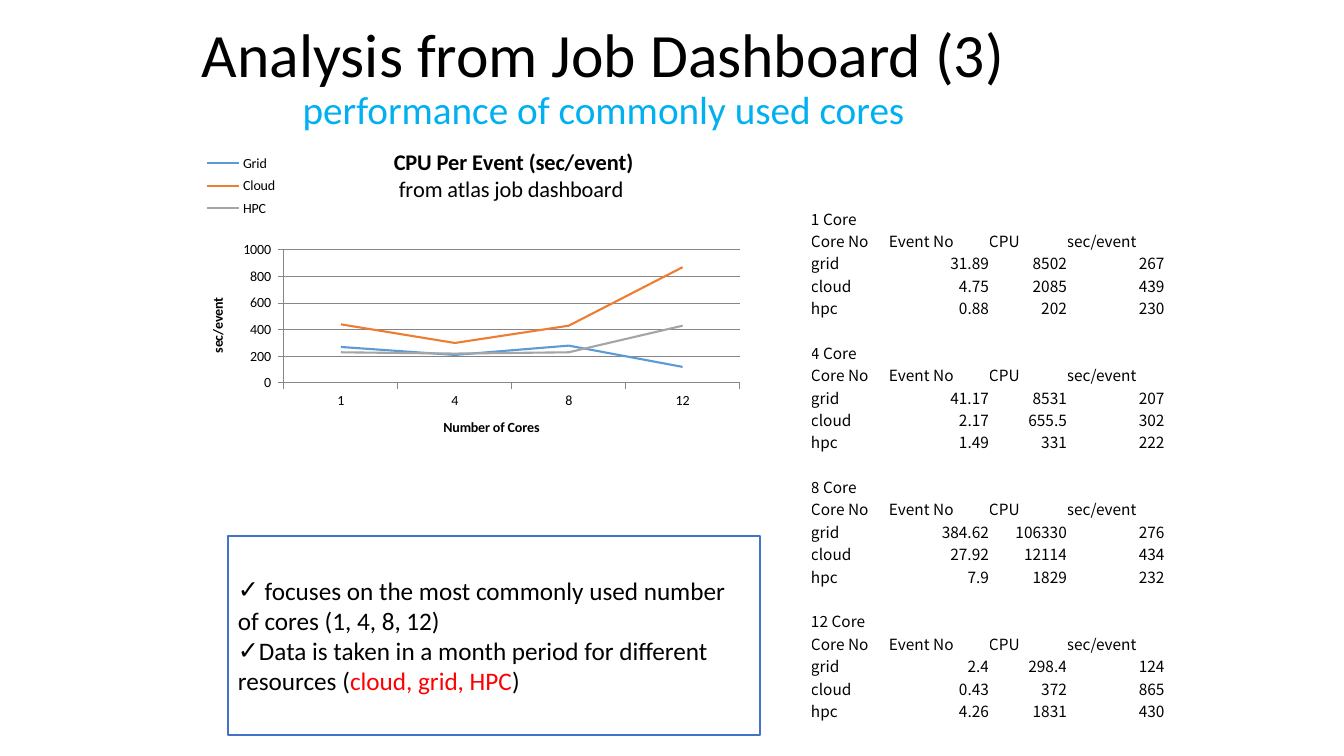
from dataclasses import dataclass
from typing import NamedTuple

from lxml import etree
from pptx import Presentation
from pptx.chart.data import CategoryChartData
from pptx.dml.color import RGBColor
from pptx.enum.chart import XL_CHART_TYPE, XL_LEGEND_POSITION, XL_TICK_MARK
from pptx.enum.shapes import MSO_SHAPE
from pptx.enum.text import MSO_ANCHOR, MSO_AUTO_SIZE, PP_ALIGN
from pptx.oxml.ns import qn
from pptx.util import Emu, Pt

LINE_CHART = XL_CHART_TYPE.LINE
LEGEND_RIGHT = XL_LEGEND_POSITION.RIGHT
TICK_OUT, TICK_NONE = XL_TICK_MARK.OUTSIDE, XL_TICK_MARK.NONE
RECTANGLE = MSO_SHAPE.RECTANGLE
MIDDLE = MSO_ANCHOR.MIDDLE
NO_AUTOFIT = MSO_AUTO_SIZE.NONE
LEFT, CENTER, RIGHT = PP_ALIGN.LEFT, PP_ALIGN.CENTER, PP_ALIGN.RIGHT

SLIDE_WIDTH, SLIDE_HEIGHT = 1344, 756
EMU_PER_PX = 12192000 / SLIDE_WIDTH


@dataclass(frozen=True)
class Theme:
    font: str = "Calibri"
    table_font: str = "Noto Sans CJK SC"
    bullet_font: str = "Arial"
    black: str = "000000"
    white: str = "FFFFFF"
    accent: str = "00B0F0"
    highlight: str = "FF0000"
    border: str = "4472C4"
    axis: str = "868686"
    title_size: int = 44
    subtitle_size: int = 28
    body_size: int = 18
    chart_title_size: int = 16
    table_size: int = 11
    chart_size: int = 10


class Box(NamedTuple):
    left: int
    top: int
    width: int
    height: int


class Resource(NamedTuple):
    name: str
    events: str
    cpu: str
    rate: int


class CoreGroup(NamedTuple):
    cores: int
    resources: tuple[Resource, ...]


THEME = Theme()
TITLE_BOX = Box(110, 0, 987, 157)
CHART_BOX = Box(187, 132, 651, 326)
PLOT_BOX = Box(284, 250, 456, 133)
LEGEND_BOX = Box(201, 149, 80, 74)
CHART_TITLE_BOX = Box(391, 144, 240, 56)
NOTES_BOX = Box(228, 536, 532, 199)
TABLE_LEFT, TABLE_TOP, ROW_HEIGHT = 811, 207, 22
COLUMN_WIDTHS = (78, 100, 78, 101)
HEADERS = ("Core No", "Event No", "CPU", "sec/event")
SERIES_COLORS = {"Grid": "5B9BD5", "Cloud": "ED7D31", "HPC": "A5A5A5"}

CORE_GROUPS = (
    CoreGroup(1, (Resource("grid", "31.89", "8502", 267),
                  Resource("cloud", "4.75", "2085", 439),
                  Resource("hpc", "0.88", "202", 230))),
    CoreGroup(4, (Resource("grid", "41.17", "8531", 207),
                  Resource("cloud", "2.17", "655.5", 302),
                  Resource("hpc", "1.49", "331", 222))),
    CoreGroup(8, (Resource("grid", "384.62", "106330", 276),
                  Resource("cloud", "27.92", "12114", 434),
                  Resource("hpc", "7.9", "1829", 232))),
    CoreGroup(12, (Resource("grid", "2.4", "298.4", 124),
                   Resource("cloud", "0.43", "372", 865),
                   Resource("hpc", "4.26", "1831", 430))),
)

# Each note is a bulleted paragraph of (text, colour) spans
NOTES = (
    ((" focuses on the most commonly used number of cores (1, 4, 8, 12)", THEME.black),),
    (("Data is taken in a month period for different resources (", THEME.black),
     ("cloud, grid, HPC", THEME.highlight),
     (")", THEME.black)),
)


def px(length: int) -> Emu:
    return Emu(round(length * EMU_PER_PX))


def place(box: Box) -> tuple[Emu, ...]:
    return tuple(px(length) for length in box)


def rgb(color: str) -> RGBColor:
    return RGBColor.from_string(color)


def nearest_ten(value: int) -> int:
    return (value + 5) // 10 * 10


def add_span(para, text: str, *, size: int, color: str = THEME.black,
             font: str = THEME.font, bold: bool = False) -> None:
    span = para.add_run()
    span.text = text
    span.font.size, span.font.name, span.font.bold = Pt(size), font, bold
    span.font.color.rgb = rgb(color)


def add_title(page) -> None:
    title = page.shapes.title
    title.left, title.top, title.width, title.height = place(TITLE_BOX)
    frame = title.text_frame
    frame.auto_size, frame.vertical_anchor, frame.word_wrap = NO_AUTOFIT, MIDDLE, True
    para = frame.paragraphs[0]
    para.alignment, para.line_spacing = CENTER, 0.9
    add_span(para, "Analysis from Job Dashboard (3)", size=THEME.title_size)
    para.add_line_break()
    add_span(para, "performance of commonly used cores",
             size=THEME.subtitle_size, color=THEME.accent)


def add_notes(page) -> None:
    shape = page.shapes.add_shape(RECTANGLE, *place(NOTES_BOX))
    shape.shadow.inherit = False
    shape.fill.solid()
    shape.fill.fore_color.rgb = rgb(THEME.white)
    shape.line.color.rgb, shape.line.width = rgb(THEME.border), Pt(1)
    frame = shape.text_frame
    frame.word_wrap, frame.vertical_anchor = True, MIDDLE
    for index, spans in enumerate(NOTES):
        para = frame.add_paragraph() if index else frame.paragraphs[0]
        para.alignment = LEFT
        properties = para._p.get_or_add_pPr()
        etree.SubElement(properties, qn("a:buFont"), typeface=THEME.bullet_font)
        etree.SubElement(properties, qn("a:buChar"), char="✓")
        for text, color in spans:
            add_span(para, text, size=THEME.body_size, color=color)


def set_layout(element, box: Box, *, inner: bool = False, sized: bool = True) -> None:
    """Place a chart part by fractions of the chart's own area."""
    for old in element.findall(qn("c:layout")):
        element.remove(old)
    layout = etree.Element(qn("c:layout"))
    manual = etree.SubElement(layout, qn("c:manualLayout"))
    settings = {"layoutTarget": "inner"} if inner else {}
    settings |= {"xMode": "edge", "yMode": "edge",
                 "x": f"{(box.left - CHART_BOX.left) / CHART_BOX.width:.3f}",
                 "y": f"{(box.top - CHART_BOX.top) / CHART_BOX.height:.3f}"}
    if sized:
        settings |= {"w": f"{box.width / CHART_BOX.width:.3f}",
                     "h": f"{box.height / CHART_BOX.height:.3f}"}
    for name, value in settings.items():
        etree.SubElement(manual, qn(f"c:{name}"), val=value)
    before = {qn("c:tx"), qn("c:legendPos"), qn("c:legendEntry")}
    element.insert(sum(child.tag in before for child in element), layout)


def format_axis(axis, title: str) -> None:
    add_span(axis.axis_title.text_frame.paragraphs[0], title,
             size=THEME.chart_size, bold=True)
    axis.major_tick_mark, axis.minor_tick_mark = TICK_OUT, TICK_NONE
    axis.format.line.color.rgb = rgb(THEME.axis)


def add_cpu_chart(page) -> None:
    data = CategoryChartData()
    data.categories = [str(group.cores) for group in CORE_GROUPS]
    for index, name in enumerate(SERIES_COLORS):
        data.add_series(name, [nearest_ten(group.resources[index].rate)
                               for group in CORE_GROUPS])
    chart = page.shapes.add_chart(LINE_CHART, *place(CHART_BOX), data).chart
    chart.font.size, chart.font.name = Pt(THEME.chart_size), THEME.font
    chart.font.color.rgb = rgb(THEME.black)
    # Title and legend
    frame = chart.chart_title.text_frame
    add_span(frame.paragraphs[0], "CPU Per Event (sec/event)",
             size=THEME.chart_title_size, bold=True)
    add_span(frame.add_paragraph(), "from atlas job dashboard ", size=THEME.chart_title_size)
    chart.has_legend = True
    chart.legend.position, chart.legend.include_in_layout = LEGEND_RIGHT, False
    # Axes
    format_axis(chart.category_axis, "Number of Cores")
    values = chart.value_axis
    format_axis(values, "sec/event")
    values.minimum_scale, values.maximum_scale, values.major_unit = 0, 1000, 200
    values.major_gridlines.format.line.color.rgb = rgb(THEME.axis)
    values.tick_labels.number_format = "0_ "
    values.tick_labels.number_format_is_linked = False
    # Lines
    chart.plots[0].vary_by_categories = False
    for series, color in zip(chart.plots[0].series, SERIES_COLORS.values()):
        series.smooth = False
        series.format.line.color.rgb, series.format.line.width = rgb(color), Pt(1.5)
    set_layout(chart.chart_title._element, CHART_TITLE_BOX, sized=False)
    set_layout(chart.legend._element, LEGEND_BOX)
    set_layout(chart.plots[0]._element.getparent(), PLOT_BOX, inner=True)


def table_rows() -> list[tuple[str, ...]]:
    rows: list[tuple[str, ...]] = []
    for group in CORE_GROUPS:
        if rows:
            rows.append(("",) * len(HEADERS))
        rows += [(f"{group.cores} Core", "", "", ""), HEADERS]
        rows += [(r.name, r.events, r.cpu, f"{r.rate} ") for r in group.resources]
    return rows


def fill_cell(cell, text: str) -> None:
    cell.fill.background()
    cell.vertical_anchor = MIDDLE
    cell.margin_left = cell.margin_right = cell.margin_top = cell.margin_bottom = 0
    para = cell.text_frame.paragraphs[0]
    if text:
        para.alignment = RIGHT if text[0].isdigit() and "Core" not in text else LEFT
        add_span(para, text, size=THEME.table_size, font=THEME.table_font)
    else:
        # An empty cell needs the small type too, or its row grows
        end = etree.SubElement(para._p, qn("a:endParaRPr"), sz=str(THEME.table_size * 100))
        for script in ("a:latin", "a:ea"):
            etree.SubElement(end, qn(script), typeface=THEME.table_font)


def add_core_table(page) -> None:
    rows = table_rows()
    box = Box(TABLE_LEFT, TABLE_TOP, sum(COLUMN_WIDTHS), ROW_HEIGHT * len(rows))
    table = page.shapes.add_table(len(rows), len(HEADERS), *place(box)).table
    table.first_row = table.horz_banding = False
    for column, width in zip(table.columns, COLUMN_WIDTHS):
        column.width = px(width)
    for row, texts in zip(table.rows, rows):
        row.height = px(ROW_HEIGHT)
        for cell, text in zip(row.cells, texts):
            fill_cell(cell, text)


def main() -> None:
    deck = Presentation()
    deck.slide_width, deck.slide_height = px(SLIDE_WIDTH), px(SLIDE_HEIGHT)
    page = deck.slides.add_slide(deck.slide_layouts.get_by_name("Title Only"))
    add_title(page)
    add_notes(page)
    add_cpu_chart(page)
    add_core_table(page)
    deck.save("out.pptx")


if __name__ == "__main__":
    main()
